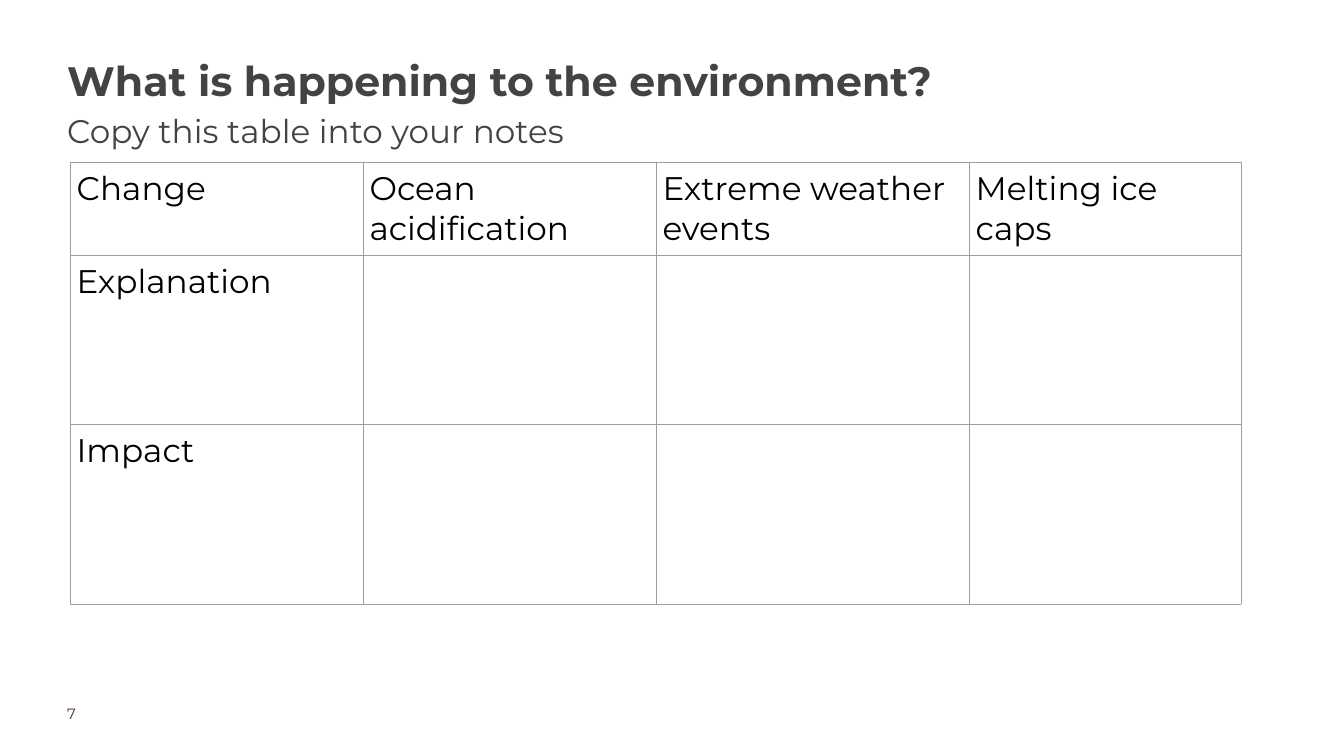
"""Build the slide with a note-taking table on environmental change."""
from lxml import etree
from pptx import Presentation
from pptx.dml.color import RGBColor
from pptx.enum import text
from pptx.oxml import ns
from pptx.util import Inches, Pt

WIDTH, HEIGHT = 20, 11.25
FONT = "Montserrat"
GREY, BROWN, BLACK, RULE = "434343", "4B3241", "000000", "9E9E9E"
TITLE = [("What is happening to the environment?", 44, True),
         ("Copy this table into your notes", 35, False)]
PAGE = "7"
ROWS = [("Change", "Ocean acidification", "Extreme weather events", "Melting ice caps"),
        ("Explanation", "", "", ""),
        ("Impact", "", "", "")]
COL_WIDTHS = [4.36, 4.36, 4.66, 4.05]
ROW_HEIGHTS = [1.39, 2.51, 2.68]
MARGIN = WIDTH / 20


def rgb(value):
    """Return a colour from its hex string."""
    return RGBColor.from_string(value)


def add_run(p, words, size, color, bold=False):
    """Add one formatted run to a paragraph."""
    r = p.add_run()
    r.text = words
    r.font.name, r.font.size, r.font.bold = FONT, Pt(size), bold
    r.font.color.rgb = rgb(color)


def place(sp, left, top, width, height):
    """Set a text shape's place and return its bare, top-anchored frame."""
    sp.left, sp.top, sp.width, sp.height = map(Inches, (left, top, width, height))
    tf = sp.text_frame
    tf.margin_left = tf.margin_right = tf.margin_top = tf.margin_bottom = 0
    tf.word_wrap, tf.auto_size = True, text.MSO_AUTO_SIZE.NONE
    tf.vertical_anchor = text.MSO_ANCHOR.TOP
    return tf


def add_borders(cell):
    """Rule all four sides of a cell."""
    props = cell._tc.get_or_add_tcPr()
    for i, side in enumerate(("lnL", "lnR", "lnT", "lnB")):
        line = etree.Element(ns.qn(f"a:{side}"), w=str(Pt(0.75)))
        fill = etree.SubElement(line, ns.qn("a:solidFill"))
        etree.SubElement(fill, ns.qn("a:srgbClr"), val=RULE)
        props.insert(i, line)


def add_grid(s):
    """Add the table with its labels."""
    table = s.shapes.add_table(
        len(ROWS), len(COL_WIDTHS), Inches(1.04), Inches(2.41),
        Inches(sum(COL_WIDTHS)), Inches(sum(ROW_HEIGHTS))).table
    table.first_row = table.horz_banding = False
    for column, width in zip(table.columns, COL_WIDTHS):
        column.width = Inches(width)
    for row, height, labels in zip(table.rows, ROW_HEIGHTS, ROWS):
        row.height = Inches(height)
        for cell, label in zip(row.cells, labels):
            cell.fill.background()
            add_borders(cell)
            cell.margin_left = cell.margin_right = Inches(0.1)
            cell.margin_top = cell.margin_bottom = Inches(0.1)
            if label:
                add_run(cell.text_frame.paragraphs[0], label, 35, BLACK)


def main():
    """Build and save the slide."""
    prs = Presentation()
    prs.slide_width, prs.slide_height = Inches(WIDTH), Inches(HEIGHT)
    s = prs.slides.add_slide(prs.slide_layouts[5])
    tf = place(s.shapes.title, MARGIN, 0.72, 14.44, 0.99)
    for i, (words, size, bold) in enumerate(TITLE):
        p = tf.add_paragraph() if i else tf.paragraphs[0]
        p.alignment, p.line_spacing = text.PP_ALIGN.LEFT, 1.15
        p.space_before = Pt(0)
        add_run(p, words, size, GREY, bold)
    tf = place(s.shapes.add_textbox(0, 0, 0, 0), MARGIN, 10.48, 1.57, 0.39)
    add_run(tf.paragraphs[0], PAGE, 16, BROWN)
    add_grid(s)
    prs.save("out.pptx")


if __name__ == "__main__":
    main()
